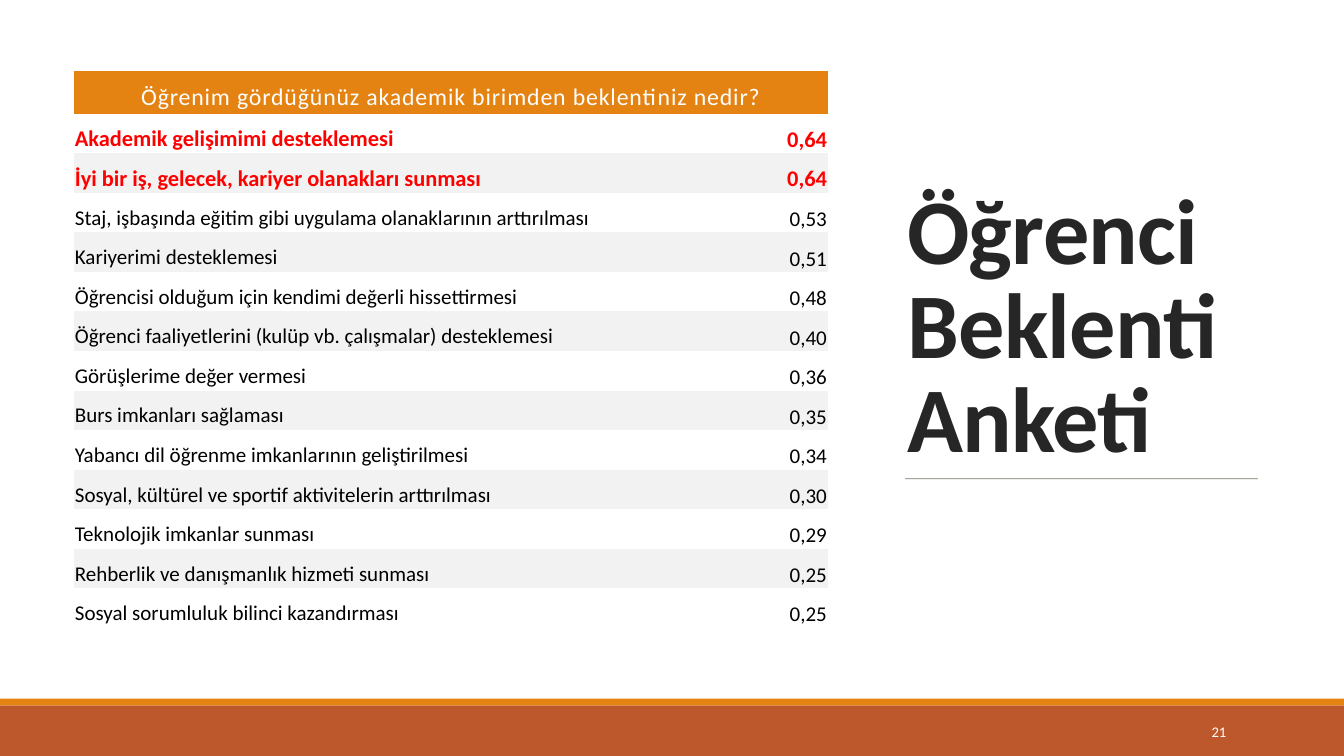
"""Builds the student expectation survey slide with its ranked results table."""
from dataclasses import dataclass, field
from typing import Any

from lxml.etree import SubElement
from pptx import Presentation
from pptx.dml.color import RGBColor
from pptx.enum.shapes import MSO_CONNECTOR as Connector, MSO_SHAPE as Shape
from pptx.enum.text import MSO_ANCHOR as Anchor, MSO_AUTO_SIZE as AutoSize, PP_ALIGN as Align
from pptx.oxml.ns import qn
from pptx.util import Inches, Pt


@dataclass(frozen=True)
class TextStyle:
    size: float
    color: str
    bold: bool = False
    tracking: float = 0


@dataclass(frozen=True)
class Theme:
    font: str = "Calibri"
    orange: str = "E48312"
    rust: str = "BD582C"
    stripe: str = "F2F2F2"
    rule: str = "637052"
    title: TextStyle = field(default=TextStyle(66, "262626", True, -0.5))
    header: TextStyle = field(default=TextStyle(17, "FFFFFF", tracking=0.6))
    top: TextStyle = field(default=TextStyle(16, "FF0000", True))
    body: TextStyle = field(default=TextStyle(15, "000000"))
    number: TextStyle = field(default=TextStyle(10.5, "FFFFFF"))


@dataclass(frozen=True)
class Frame:
    """Left, top, width and height as percentages of the slide."""
    left: float
    top: float
    width: float
    height: float

    def lengths(self) -> tuple[int, int, int, int]:
        return across(self.left), down(self.top), across(self.width), down(self.height)


@dataclass(frozen=True)
class Band:
    frame: Frame
    color: str


@dataclass(frozen=True)
class Expectation:
    label: str
    score: str
    top: bool = False


THEME = Theme()
WIDTH, HEIGHT = Inches(13.33), Inches(7.5)
TITLE = Frame(66.75, 9.33, 27.9, 53.73)
RULE = Frame(67.35, 63.33, 26.25, 0)
NUMBER = Frame(81.25, 94.13, 10.73, 5.33)
TABLE = Frame(5.5, 9.33, 56.1, 73.73)
SCORE_WIDTH, HEADER_HEIGHT = 7.5, 5.73
NO_STYLE = "{2D5ABB26-0587-4C30-8999-92F81FD0307C}"
BANDS = [
    Band(Frame(0, 92.4, 100, 0.93), THEME.orange),
    Band(Frame(0, 93.33, 100, 6.67), THEME.rust),
]
QUESTION = "Öğrenim gördüğünüz akademik birimden beklentiniz nedir?"
EXPECTATIONS = [
    Expectation("Akademik gelişimimi desteklemesi", "0,64", True),
    Expectation("İyi bir iş, gelecek, kariyer olanakları sunması", "0,64", True),
    Expectation("Staj, işbaşında eğitim gibi uygulama olanaklarının arttırılması", "0,53"),
    Expectation("Kariyerimi desteklemesi", "0,51"),
    Expectation("Öğrencisi olduğum için kendimi değerli hissettirmesi", "0,48"),
    Expectation("Öğrenci faaliyetlerini (kulüp vb. çalışmalar) desteklemesi", "0,40"),
    Expectation("Görüşlerime değer vermesi", "0,36"),
    Expectation("Burs imkanları sağlaması", "0,35"),
    Expectation("Yabancı dil öğrenme imkanlarının geliştirilmesi", "0,34"),
    Expectation("Sosyal, kültürel ve sportif aktivitelerin arttırılması", "0,30"),
    Expectation("Teknolojik imkanlar sunması", "0,29"),
    Expectation("Rehberlik ve danışmanlık hizmeti sunması", "0,25"),
    Expectation("Sosyal sorumluluk bilinci kazandırması", "0,25"),
]


def across(share: float) -> int:
    return round(WIDTH * share / 100)


def down(share: float) -> int:
    return round(HEIGHT * share / 100)


def apply(target: Any, formats: dict[str, Any]) -> None:
    for name, value in formats.items():
        setattr(target, name, value)


def place(box: Any, frame: Frame) -> None:
    apply(box, dict(zip(("left", "top", "width", "height"), frame.lengths())))


def write(text_frame: Any, text: str, style: TextStyle, **para_formats: Any) -> None:
    para = text_frame.paragraphs[0]
    apply(para, para_formats)
    span = para.add_run()
    span.text = text
    apply(span.font, {"name": THEME.font, "size": Pt(style.size), "bold": style.bold})
    span.font.color.rgb = RGBColor.from_string(style.color)
    span._r.get_or_add_rPr().set("spc", str(round(style.tracking * 100)))


def draw_title(page: Any) -> None:
    box = page.shapes.title
    place(box, TITLE)
    apply(box.text_frame, {"word_wrap": True, "auto_size": AutoSize.NONE,
                           "vertical_anchor": Anchor.BOTTOM})
    write(box.text_frame, "Öğrenci Beklenti Anketi", THEME.title,
          alignment=Align.LEFT, line_spacing=0.85)


def draw_band(page: Any, band: Band) -> None:
    box = page.shapes.add_shape(Shape.RECTANGLE, *band.frame.lengths())
    box.shadow.inherit = False
    box.fill.solid()
    box.fill.fore_color.rgb = RGBColor.from_string(band.color)
    box.line.fill.background()


def draw_rule(page: Any) -> None:
    left, top, width, _ = RULE.lengths()
    rule = page.shapes.add_connector(Connector.STRAIGHT, left, top, left + width, top)
    rule.line.width = Pt(0.5)
    rule.line.color.rgb = RGBColor.from_string(THEME.rule)
    properties = rule._element.spPr
    SubElement(next(properties.iter(qn("a:srgbClr"))), qn("a:alpha"), val="90000")
    SubElement(properties, qn("a:effectLst"))


def draw_number(page: Any) -> None:
    box = page.shapes.add_textbox(*NUMBER.lengths())
    apply(box.text_frame, {"word_wrap": True, "vertical_anchor": Anchor.MIDDLE})
    write(box.text_frame, "21", THEME.number, alignment=Align.RIGHT, space_after=Pt(6))


def fill_cell(cell: Any, text: str, style: TextStyle, align: Any, anchor: Any,
              color: str | None) -> None:
    apply(cell, {"margin_left": Inches(0.01), "margin_right": Inches(0.01),
                 "margin_top": Inches(0.11), "margin_bottom": 0, "vertical_anchor": anchor})
    if color:
        cell.fill.solid()
        cell.fill.fore_color.rgb = RGBColor.from_string(color)
    else:
        cell.fill.background()
    write(cell.text_frame, text, style, alignment=align)


def draw_table(page: Any) -> None:
    count = len(EXPECTATIONS)
    table = page.shapes.add_table(count + 1, 2, *TABLE.lengths()).table
    apply(table, {"first_row": False, "horz_banding": False})
    next(table._tbl.iter(qn("a:tableStyleId"))).text = NO_STYLE
    for column, share in zip(table.columns, (TABLE.width - SCORE_WIDTH, SCORE_WIDTH)):
        column.width = across(share)
    row_height = (TABLE.height - HEADER_HEIGHT) / count
    for row, share in zip(table.rows, [HEADER_HEIGHT] + [row_height] * count):
        row.height = down(share)
    header = table.cell(0, 0)
    header.merge(table.cell(0, 1))
    fill_cell(header, QUESTION, THEME.header, Align.CENTER, Anchor.MIDDLE, THEME.orange)
    for index, item in enumerate(EXPECTATIONS, start=1):
        style = THEME.top if item.top else THEME.body
        color = None if index % 2 else THEME.stripe
        fill_cell(table.cell(index, 0), item.label, style, Align.JUSTIFY, Anchor.MIDDLE, color)
        fill_cell(table.cell(index, 1), item.score, style, Align.RIGHT, Anchor.BOTTOM, color)


def main() -> None:
    deck = Presentation()
    apply(deck, {"slide_width": WIDTH, "slide_height": HEIGHT})
    page = deck.slides.add_slide(deck.slide_layouts.get_by_name("Title Only"))
    draw_title(page)
    draw_rule(page)
    for band in BANDS:
        draw_band(page, band)
    draw_number(page)
    draw_table(page)
    deck.save("out.pptx")


if __name__ == "__main__":
    main()
